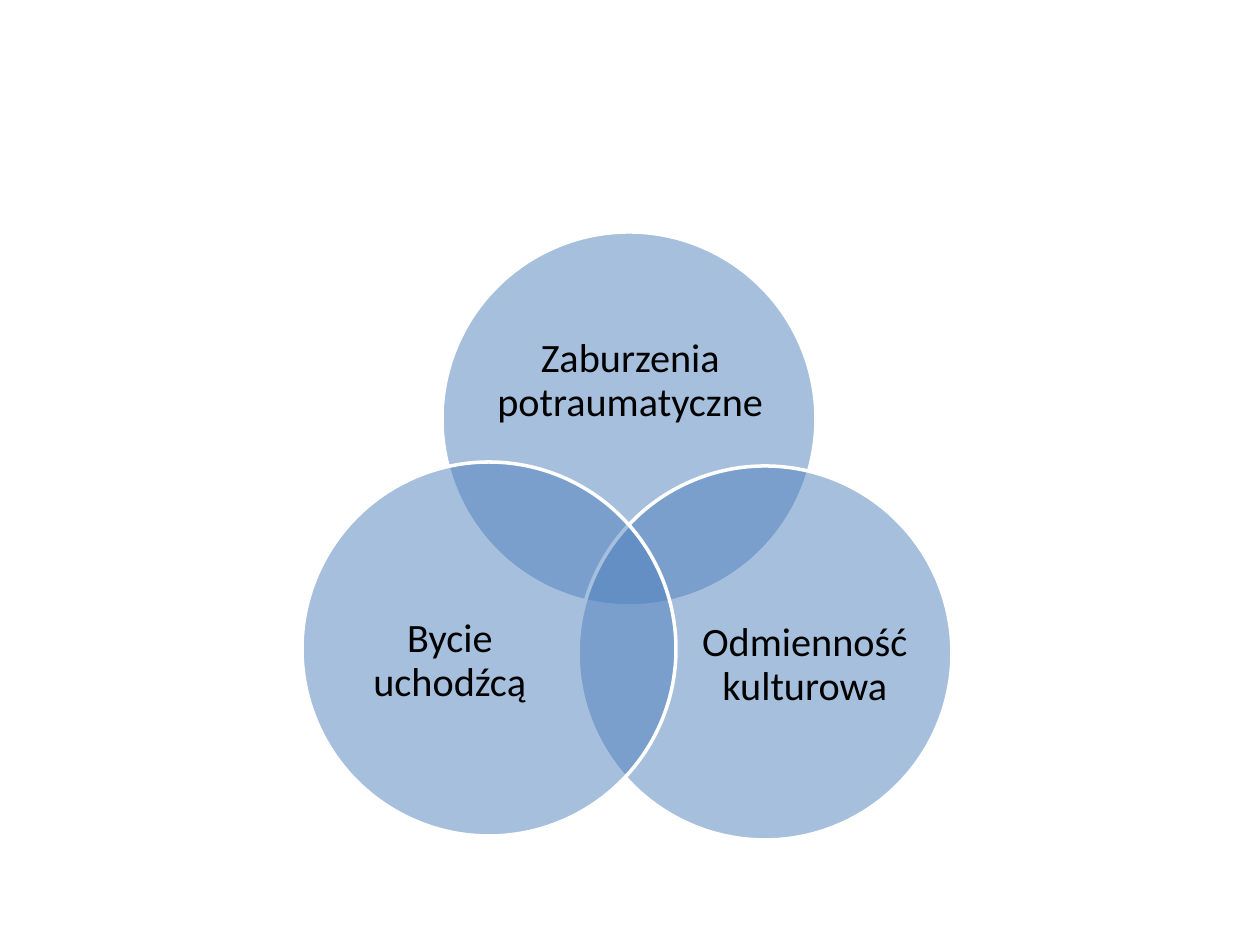
from dataclasses import dataclass

from lxml.etree import SubElement
from pptx import Presentation
from pptx.dml.color import RGBColor
from pptx.enum.shapes import MSO_SHAPE
from pptx.enum.text import MSO_ANCHOR, PP_ALIGN
from pptx.oxml.ns import qn
from pptx.shapes.group import GroupShape
from pptx.util import Emu, Pt

EMU_PER_PX = 914400 / 126
DIAMETER = 374


@dataclass(frozen=True)
class Label:
    text: str
    left: int
    top: int
    width: int
    height: int


@dataclass(frozen=True)
class VennCircle:
    left: int
    top: int
    label: Label


CIRCLES = [
    VennCircle(442, 232, Label("Zaburzenia potraumatyczne", 493, 297, 275, 169)),
    VennCircle(578, 466, Label("Odmienność kulturowa", 693, 563, 224, 205)),
    VennCircle(302, 462, Label("Bycie uchodźcą", 338, 559, 224, 205)),
]


def px(length: int) -> Emu:
    return Emu(round(length * EMU_PER_PX))


def color(value: str) -> RGBColor:
    return RGBColor.from_string(value)


def draw_circle(group: GroupShape, circle: VennCircle) -> None:
    shape = group.shapes.add_shape(
        MSO_SHAPE.OVAL, px(circle.left), px(circle.top), px(DIAMETER), px(DIAMETER)
    )
    shape.shadow.inherit = False
    shape.fill.solid()
    shape.fill.fore_color.rgb = color("4F81BD")
    fill_color = shape.fill._xPr.find(qn("a:solidFill")).find(qn("a:srgbClr"))
    SubElement(fill_color, qn("a:alpha"), val="50000")
    shape.line.color.rgb = color("FFFFFF")
    shape.line.width = Pt(2)


def draw_label(group: GroupShape, label: Label) -> None:
    box = group.shapes.add_textbox(
        px(label.left), px(label.top), px(label.width), px(label.height)
    )
    frame = box.text_frame
    frame.word_wrap = True
    frame.vertical_anchor = MSO_ANCHOR.MIDDLE
    frame.margin_left = frame.margin_right = 0
    frame.margin_top = frame.margin_bottom = 0
    para = frame.paragraphs[0]
    para.text = label.text
    para.alignment = PP_ALIGN.CENTER
    para.line_spacing = 0.9
    para.font.name = "Calibri"
    para.font.size = Pt(23)
    para.font.color.rgb = color("000000")


def main() -> None:
    deck = Presentation()
    deck.slide_width = px(1260)
    deck.slide_height = px(945)
    page = deck.slides.add_slide(deck.slide_layouts[6])
    diagram = page.shapes.add_group_shape()
    for circle in CIRCLES:
        draw_circle(diagram, circle)
        draw_label(diagram, circle.label)
    deck.save("out.pptx")


if __name__ == "__main__":
    main()
